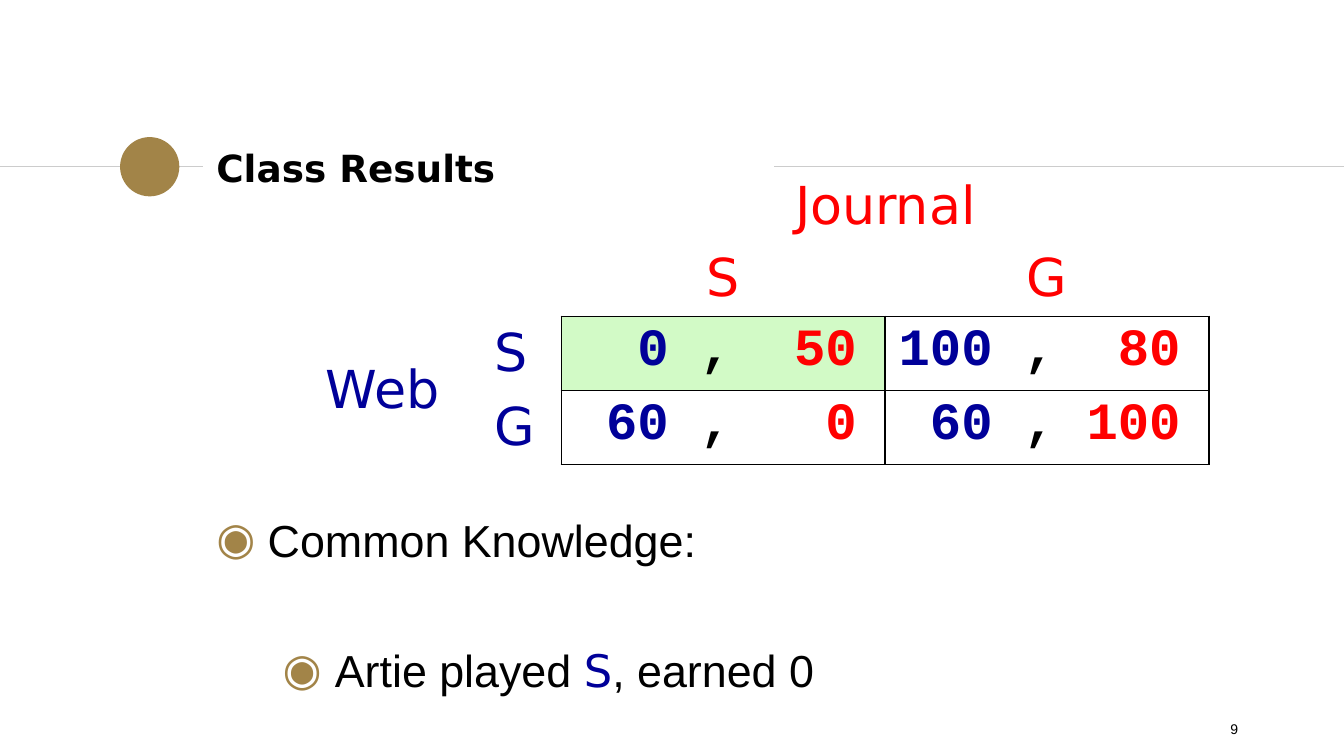
"""Build the class results slide with its two-player payoff table."""
from lxml import etree
from pptx import Presentation
from pptx.dml.color import RGBColor
from pptx.enum.shapes import MSO_CONNECTOR, MSO_SHAPE
from pptx.enum.text import MSO_ANCHOR, PP_ALIGN
from pptx.oxml.ns import qn
from pptx.util import Cm, Pt

STRAIGHT = MSO_CONNECTOR.STRAIGHT
OVAL = MSO_SHAPE.OVAL
TOP, MIDDLE, BOTTOM = MSO_ANCHOR.TOP, MSO_ANCHOR.MIDDLE, MSO_ANCHOR.BOTTOM
LEFT, CENTER, RIGHT = PP_ALIGN.LEFT, PP_ALIGN.CENTER, PP_ALIGN.RIGHT

BLACK = RGBColor(0x00, 0x00, 0x00)
RED = RGBColor(0xFF, 0x00, 0x00)
BLUE = RGBColor(0x00, 0x00, 0x99)
GOLD = RGBColor(0xA2, 0x84, 0x48)
GRAY = RGBColor(0xCC, 0xCC, 0xCC)
GREEN = RGBColor(0xD2, 0xFA, 0xC6)

SANS, BODY, MONO = "DejaVu Sans", "Arial", "Courier New"
NO_TABLE_STYLE = "{2D5ABB26-0587-4C30-8999-92F81FD0307C}"

TITLE = "Class Results"
PAGE_NUMBER = "9"
ROW_PLAYER, COLUMN_PLAYER = "Web", "Journal"
MOVES = ["S", "G"]
PAYOFFS = [[(0, 50), (100, 80)], [(60, 0), (60, 100)]]
HIGHLIGHT = (0, 0)
BULLETS = [
    {"runs": [("Common Knowledge:", BODY, BLACK)], "margin": 0.97, "hang": 0.97, "before": 0},
    {"runs": [("Artie played ", BODY, BLACK), ("S", SANS, BLUE), (", earned 0", BODY, BLACK)],
     "margin": 2.24, "hang": 0.99, "before": 41},
]

SLIDE_WIDTH, SLIDE_HEIGHT = 25.4, 14.28
RULE_Y = 3.15
RULES = [(0, 3.84), (14.63, SLIDE_WIDTH)]
DOT_CENTER, DOT_SIZE = 2.83, 1.12
TABLE_LEFT, TABLE_TOP = 5.38, 3.18
COLUMN_WIDTHS = [3.71, 1.52, 6.12, 6.12]
ROW_HEIGHT = 1.4
CELL_MARGIN = 0.1


def add_run(paragraph, text, font, size, color, bold=False):
    run = paragraph.add_run()
    run.text = text
    run.font.name = font
    run.font.size = Pt(size)
    run.font.bold = bold
    run.font.color.rgb = color


def add_text_box(slide, left, top, width, height, anchor):
    frame = slide.shapes.add_textbox(Cm(left), Cm(top), Cm(width), Cm(height)).text_frame
    frame.word_wrap = True
    frame.vertical_anchor = anchor
    frame.margin_left = frame.margin_right = Cm(0.25)
    frame.margin_top = frame.margin_bottom = Cm(0.25)
    return frame


def add_header(slide):
    for start, end in RULES:
        rule = slide.shapes.add_connector(STRAIGHT, Cm(start), Cm(RULE_Y), Cm(end), Cm(RULE_Y))
        rule.line.color.rgb = GRAY
        rule.line.width = Pt(0.75)
        etree.SubElement(rule._element.spPr, qn("a:effectLst"))
    dot = slide.shapes.add_shape(OVAL, Cm(DOT_CENTER - DOT_SIZE / 2), Cm(RULE_Y - DOT_SIZE / 2),
                                 Cm(DOT_SIZE), Cm(DOT_SIZE))
    dot.shadow.inherit = False
    dot.fill.solid()
    dot.fill.fore_color.rgb = GOLD
    dot.line.fill.background()
    title = add_text_box(slide, 3.84, 2.55, 10.77, 1.22, MIDDLE)
    add_run(title.paragraphs[0], TITLE, SANS, 20, BLACK, bold=True)


def add_bullets(slide):
    frame = add_text_box(slide, 3.84, 9.43, 18.92, 3.66, TOP)
    for index, bullet in enumerate(BULLETS):
        paragraph = frame.add_paragraph() if index else frame.paragraphs[0]
        paragraph.space_before = Pt(bullet["before"])
        for text, font, color in bullet["runs"]:
            add_run(paragraph, text, font, 24, color)
        properties = paragraph._p.get_or_add_pPr()
        properties.set("marL", str(Cm(bullet["margin"])))
        properties.set("indent", str(-Cm(bullet["hang"])))
        bullet_color = etree.SubElement(properties, qn("a:buClr"))
        etree.SubElement(bullet_color, qn("a:srgbClr"), val=str(GOLD))
        etree.SubElement(properties, qn("a:buFont"), typeface=BODY)
        etree.SubElement(properties, qn("a:buChar"), char="◉")


def fill_cell(cell, runs, alignment, anchor):
    cell.vertical_anchor = anchor
    paragraph = cell.text_frame.paragraphs[0]
    paragraph.alignment = alignment
    for text, font, color, bold in runs:
        add_run(paragraph, text, font, 28, color, bold)


def add_borders(cell):
    properties = cell._tc.get_or_add_tcPr()
    for side in ("lnL", "lnR", "lnT", "lnB"):
        border = etree.SubElement(properties, qn(f"a:{side}"), w=str(Pt(1)))
        fill = etree.SubElement(border, qn("a:solidFill"))
        etree.SubElement(fill, qn("a:srgbClr"), val=str(BLACK))


def add_payoff_table(slide):
    frame = slide.shapes.add_table(4, 4, Cm(TABLE_LEFT), Cm(TABLE_TOP),
                                   Cm(sum(COLUMN_WIDTHS)), Cm(4 * ROW_HEIGHT))
    table = frame.table
    table.first_row = table.horz_banding = False
    table._tbl.tblPr.find(qn("a:tableStyleId")).text = NO_TABLE_STYLE
    for column, width in zip(table.columns, COLUMN_WIDTHS):
        column.width = Cm(width)
    for row in table.rows:
        row.height = Cm(ROW_HEIGHT)
    for cell in table.iter_cells():
        cell.margin_top = cell.margin_bottom = Cm(CELL_MARGIN)

    table.cell(0, 2).merge(table.cell(0, 3))
    table.cell(2, 0).merge(table.cell(3, 0))
    fill_cell(table.cell(0, 2), [(COLUMN_PLAYER, SANS, RED, False)], CENTER, BOTTOM)
    fill_cell(table.cell(2, 0), [(ROW_PLAYER, SANS, BLUE, False)], CENTER, MIDDLE)
    for index, move in enumerate(MOVES, start=2):
        fill_cell(table.cell(1, index), [(move, SANS, RED, False)], CENTER, TOP)
        fill_cell(table.cell(index, 1), [(move, SANS, BLUE, False)], LEFT, MIDDLE)

    for row, payoffs in enumerate(PAYOFFS):
        for column, (first, second) in enumerate(payoffs):
            cell = table.cell(row + 2, column + 2)
            runs = [(f"{first:>3}", MONO, BLUE, True), (" , ", MONO, BLACK, True),
                    (f"{second:>3}", MONO, RED, True)]
            fill_cell(cell, runs, LEFT, TOP)
            add_borders(cell)
            if (row, column) == HIGHLIGHT:
                cell.fill.solid()
                cell.fill.fore_color.rgb = GREEN


def main():
    presentation = Presentation()
    presentation.slide_width = Cm(SLIDE_WIDTH)
    presentation.slide_height = Cm(SLIDE_HEIGHT)
    slide = presentation.slides.add_slide(presentation.slide_layouts[6])
    add_header(slide)
    number = add_text_box(slide, 17.93, 13.38, 5.72, 0.76, MIDDLE)
    number.paragraphs[0].alignment = RIGHT
    add_run(number.paragraphs[0], PAGE_NUMBER, BODY, 7.5, BLACK)
    add_bullets(slide)
    add_payoff_table(slide)
    presentation.save("out.pptx")


if __name__ == "__main__":
    main()
